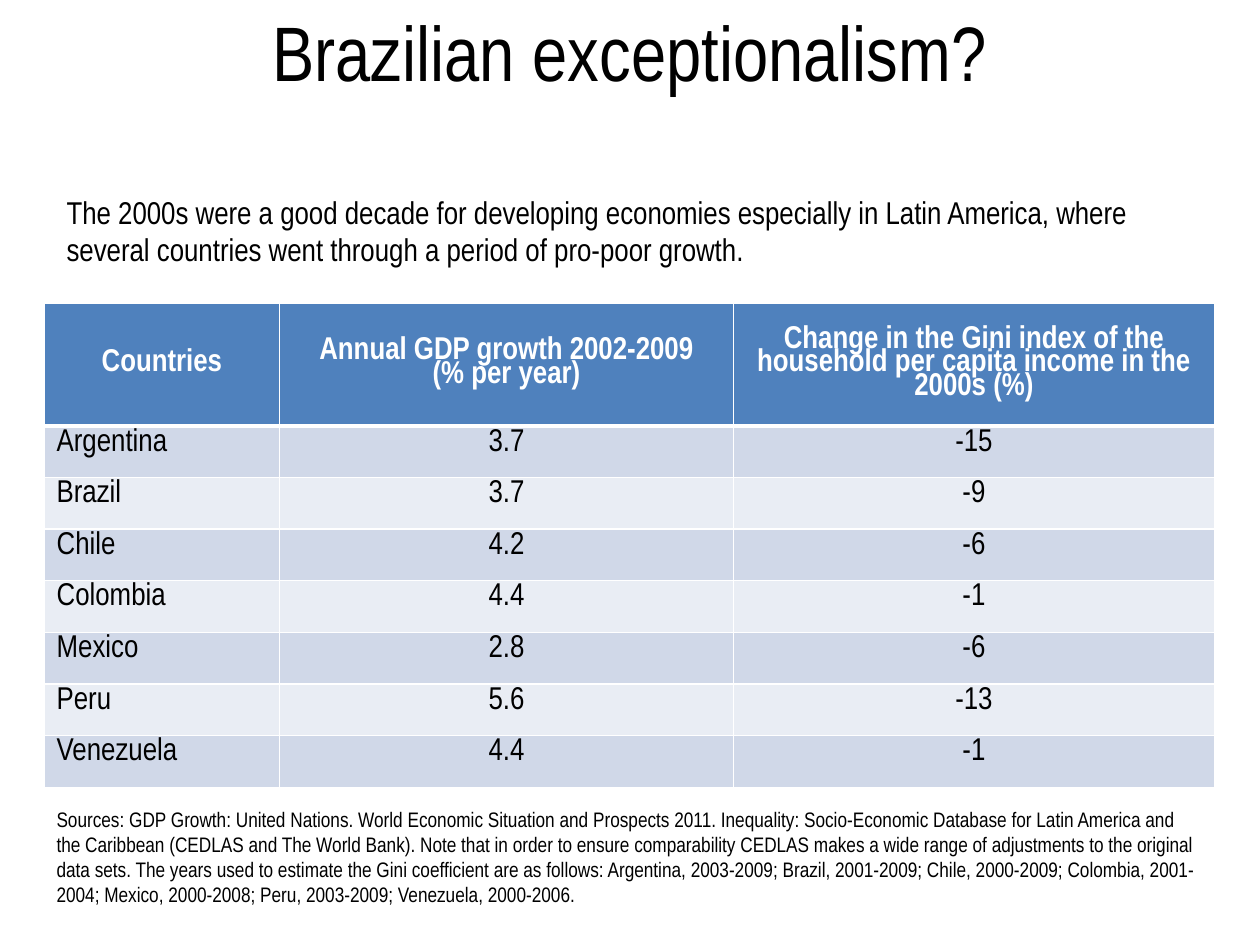
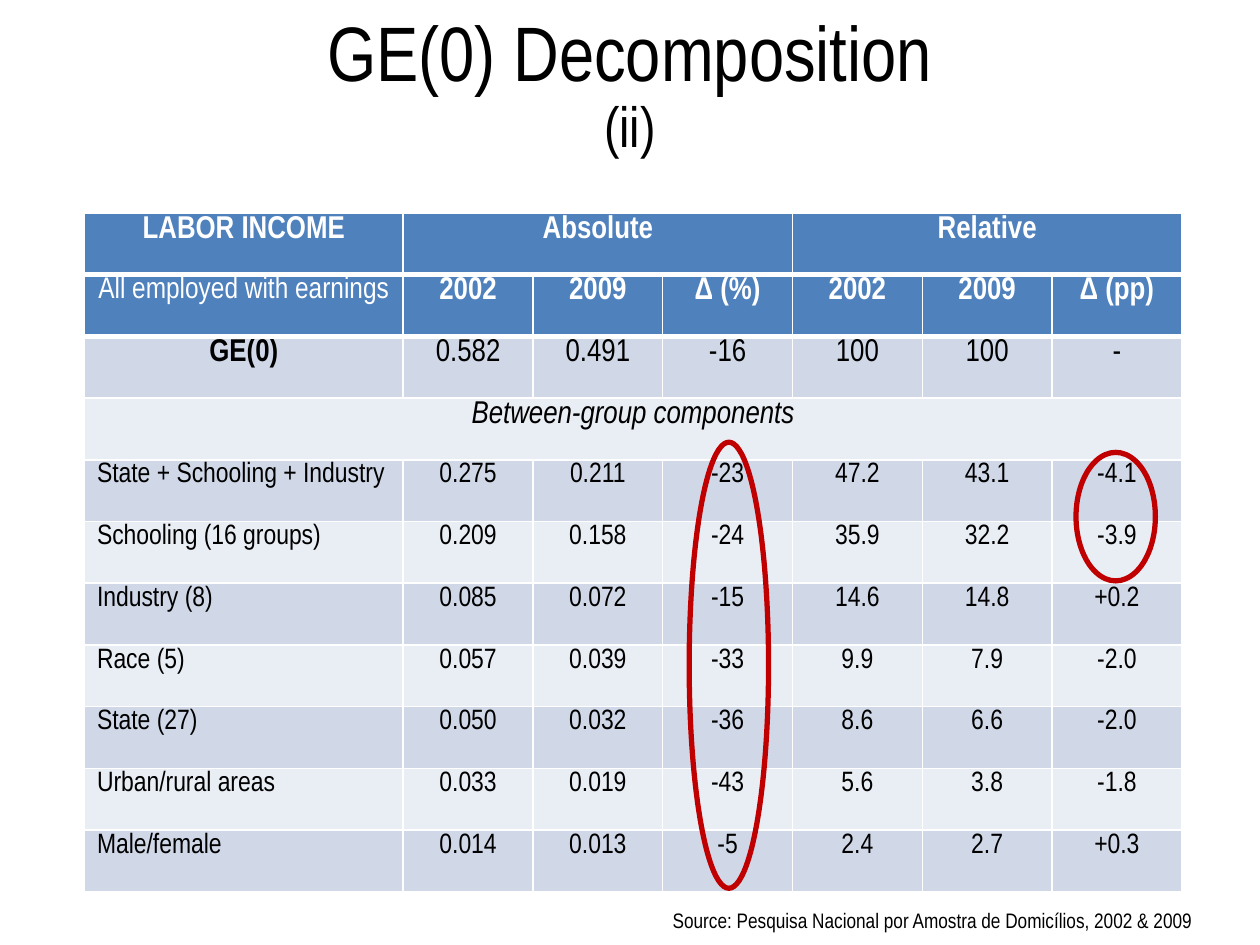
import pptx
import pptx.dml.color
import pptx.enum.shapes
import pptx.enum.text
import pptx.oxml
import pptx.oxml.ns
import pptx.util

Inches = pptx.util.Inches
Pt = pptx.util.Pt
Align = pptx.enum.text.PP_ALIGN
Anchor = pptx.enum.text.MSO_ANCHOR
Fit = pptx.enum.text.MSO_AUTO_SIZE

FONT = "Arial Narrow"
BLACK, WHITE, RED = "000000", "FFFFFF", "C00000"
BLUE, BANDS = "4F81BD", ("D0D8E8", "E9EDF4")
THIN, THICK = 1, 3

GROWTH_HEAD = [
    "Countries",
    "Annual GDP growth 2002-2009\n(% per year)",
    "Change in the Gini index of the household per capita income in the 2000s (%)",
]
GROWTH = [
    ["Argentina", "3.7", "-15"],
    ["Brazil", "3.7", "-9"],
    ["Chile", "4.2", "-6"],
    ["Colombia", "4.4", "-1"],
    ["Mexico", "2.8", "-6"],
    ["Peru", "5.6", "-13"],
    ["Venezuela", "4.4", "-1"],
]
INTRO = (
    "The 2000s were a good decade for developing economies especially in Latin America, "
    "where several countries went through a period of pro-poor growth."
)
SOURCES = (
    "Sources: GDP Growth: United Nations. World Economic Situation and Prospects 2011. "
    "Inequality: Socio-Economic Database for Latin America and the Caribbean (CEDLAS and "
    "The World Bank). Note that in order to ensure comparability CEDLAS makes a wide range "
    "of adjustments to the original data sets. The years used to estimate the Gini "
    "coefficient are as follows: Argentina, 2003-2009; Brazil, 2001-2009; Chile, 2000-2009; "
    "Colombia, 2001-2004; Mexico, 2000-2008; Peru, 2003-2009; Venezuela, 2000-2006."
)
GROUP_HEAD = ["LABOR INCOME", "Absolute", "Relative"]
YEAR_HEAD = ["All employed with earnings", "2002", "2009", "Δ (%)", "2002", "2009", "Δ (pp)"]
TOTAL = ["GE(0)", "0.582", "0.491", "-16", "100", "100", "-"]
PARTS = [
    ["State + Schooling + Industry", "0.275", "0.211", "-23", "47.2", "43.1", "-4.1"],
    ["Schooling (16 groups)", "0.209", "0.158", "-24", "35.9", "32.2", "-3.9"],
    ["Industry (8)", "0.085", "0.072", "-15", "14.6", "14.8", "+0.2"],
    ["Race (5)", "0.057", "0.039", "-33", "9.9", "7.9", "-2.0"],
    ["State (27)", "0.050", "0.032", "-36", "8.6", "6.6", "-2.0"],
    ["Urban/rural areas", "0.033", "0.019", "-43", "5.6", "3.8", "-1.8"],
    ["Male/female", "0.014", "0.013", "-5", "2.4", "2.7", "+0.3"],
]


def color(code):
    return pptx.dml.color.RGBColor.from_string(code)


def add_run(para, text, size, ink=BLACK, bold=False, slant=False):
    run = para.add_run()
    run.text = text
    font = run.font
    font.name, font.size = FONT, Pt(size)
    font.bold, font.italic = bold, slant
    font.color.rgb = color(ink)


def add_title(deck, lines):
    """Add a slide whose title stacks the given (text, size) lines."""
    slide = deck.slides.add_slide(deck.slide_layouts[5])
    title = slide.shapes.title
    title.left, title.top = Inches(0.5), Inches(0.05)
    title.width, title.height = Inches(9), Inches(1.25)
    frame = title.text_frame
    frame.auto_size = Fit.NONE
    frame.vertical_anchor = Anchor.TOP
    frame.margin_top = Inches(0.07)
    para = frame.paragraphs[0]
    para.alignment, para.line_spacing = Align.CENTER, 0.9
    for index, (text, size) in enumerate(lines):
        if index:
            para.add_line_break()
        add_run(para, text, size)
    return slide


def add_note(slide, at, text, size, wrap=True):
    box = slide.shapes.add_textbox(*map(Inches, at))
    box.text_frame.word_wrap = wrap
    add_run(box.text_frame.paragraphs[0], text, size)


def add_ring(slide, at):
    oval = pptx.enum.shapes.MSO_SHAPE.OVAL
    ring = slide.shapes.add_shape(oval, *map(Inches, at))
    ring.shadow.inherit = False
    ring.fill.background()
    ring.line.color.rgb = color(RED)
    ring.line.width = Pt(3)


def set_edges(cell, top, base):
    """Draw white cell borders with the given top and bottom widths."""
    props = cell._tc.get_or_add_tcPr()
    space = pptx.oxml.ns.nsdecls("a")
    for index, (side, width) in enumerate(zip("LRTB", (THIN, THIN, top, base))):
        props.insert(index, pptx.oxml.parse_xml(
            f'<a:ln{side} {space} w="{Pt(width)}"><a:solidFill>'
            f'<a:srgbClr val="{WHITE}"/></a:solidFill></a:ln{side}>'))


def add_grid(slide, left, top, widths, heights):
    shape = slide.shapes.add_table(
        len(heights), len(widths), Inches(left), Inches(top),
        Inches(sum(widths)), Inches(sum(heights)))
    grid = shape.table
    for column, width in zip(grid.columns, widths):
        column.width = Inches(width)
    for row, height in zip(grid.rows, heights):
        row.height = Inches(height)
    return grid


def set_cell(cell, text, fill, size=18, align=Align.CENTER, anchor=Anchor.TOP,
             edges=(THIN, THIN), **look):
    cell.fill.solid()
    cell.fill.fore_color.rgb = color(fill)
    cell.vertical_anchor = anchor
    set_edges(cell, *edges)
    frame = cell.text_frame
    for index, line in enumerate(text.split("\n")):
        para = frame.add_paragraph() if index else frame.paragraphs[0]
        para.alignment, para.line_spacing = align, 0.8
        add_run(para, line, size, **look)


def set_head(grid, texts, top=THIN, anchor=Anchor.TOP):
    for cell, text in zip(grid.rows[0].cells, texts):
        set_cell(cell, text, BLUE, anchor=anchor, edges=(top, THICK), ink=WHITE, bold=True)


def set_body(grid, rows, start, size):
    """Fill banded rows with a left-aligned label and centred values."""
    for index, texts in enumerate(rows, start):
        edges = (THICK if index == 1 else THIN, THIN)
        for spot, text in enumerate(texts):
            set_cell(grid.cell(index, spot), text, BANDS[(index - 1) % 2], size,
                     Align.CENTER if spot else Align.LEFT, edges=edges)


def show_growth(deck):
    slide = add_title(deck, [("Brazilian exceptionalism?", 44.1)])
    add_note(slide, (0.43, 1.48, 9.21, 0.71), INTRO, 18)
    grid = add_grid(slide, 0.35, 2.41, [1.87, 3.6, 3.82], [0.97] + [0.41] * len(GROWTH))
    set_head(grid, GROWTH_HEAD, anchor=Anchor.MIDDLE)
    set_body(grid, GROWTH, 1, 18)
    add_note(slide, (0.35, 6.35, 9.29, 0.91), SOURCES, 12)


def show_parts(deck):
    slide = add_title(deck, [("GE(0) Decomposition", 44.1), ("(ii)", 32.4)])
    left, top, high = 0.67, 2.18, 0.49
    grid = add_grid(slide, left, top, [2.53] + [1.03] * 6, [high] * (len(PARTS) + 3))
    set_head(grid, YEAR_HEAD, top=THICK)
    label = grid.cell(0, 0).text_frame.paragraphs[0].runs[0].font
    label.size, label.bold = Pt(17), False

    set_body(grid, [TOTAL], 1, 18)
    total = grid.cell(1, 0).text_frame.paragraphs[0]
    total.alignment = Align.CENTER
    total.runs[0].font.bold = True

    grid.cell(2, 0).merge(grid.cell(2, 6))
    set_cell(grid.cell(2, 0), "Between-group components", BANDS[1], slant=True)
    set_body(grid, PARTS, 3, 16)

    groups = add_grid(slide, left, top - high, [2.53, 3.09, 3.09], [high])
    set_head(groups, GROUP_HEAD)
    add_note(slide, (5.24, 7.15, 4.44, 0.3),
             "Source: Pesquisa Nacional por Amostra de Domicílios, 2002 & 2009", 12, wrap=False)
    add_ring(slide, (5.47, 3.51, 0.63, 3.54))
    add_ring(slide, (8.54, 3.59, 0.63, 1.02))


def main():
    deck = pptx.Presentation()
    deck.slide_width, deck.slide_height = Inches(10), Inches(7.5)
    show_growth(deck)
    show_parts(deck)
    deck.save("out.pptx")


if __name__ == "__main__":
    main()
